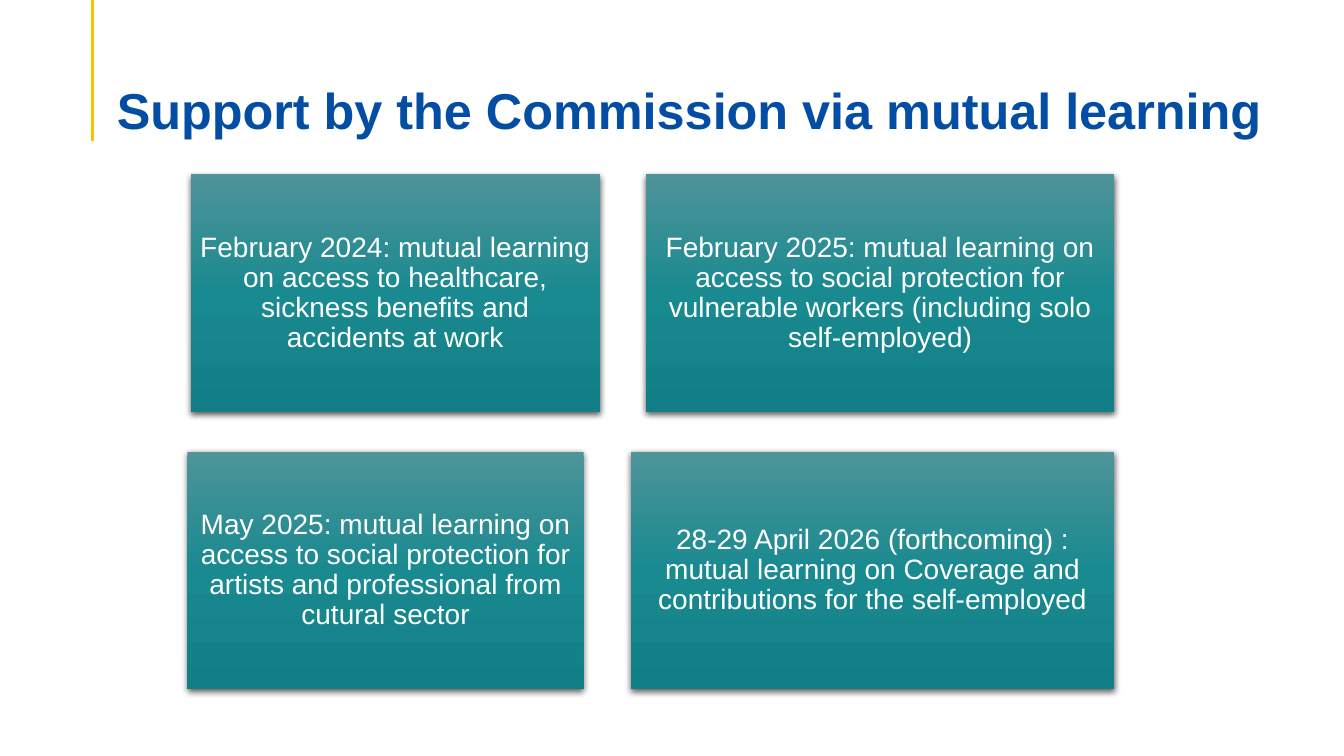
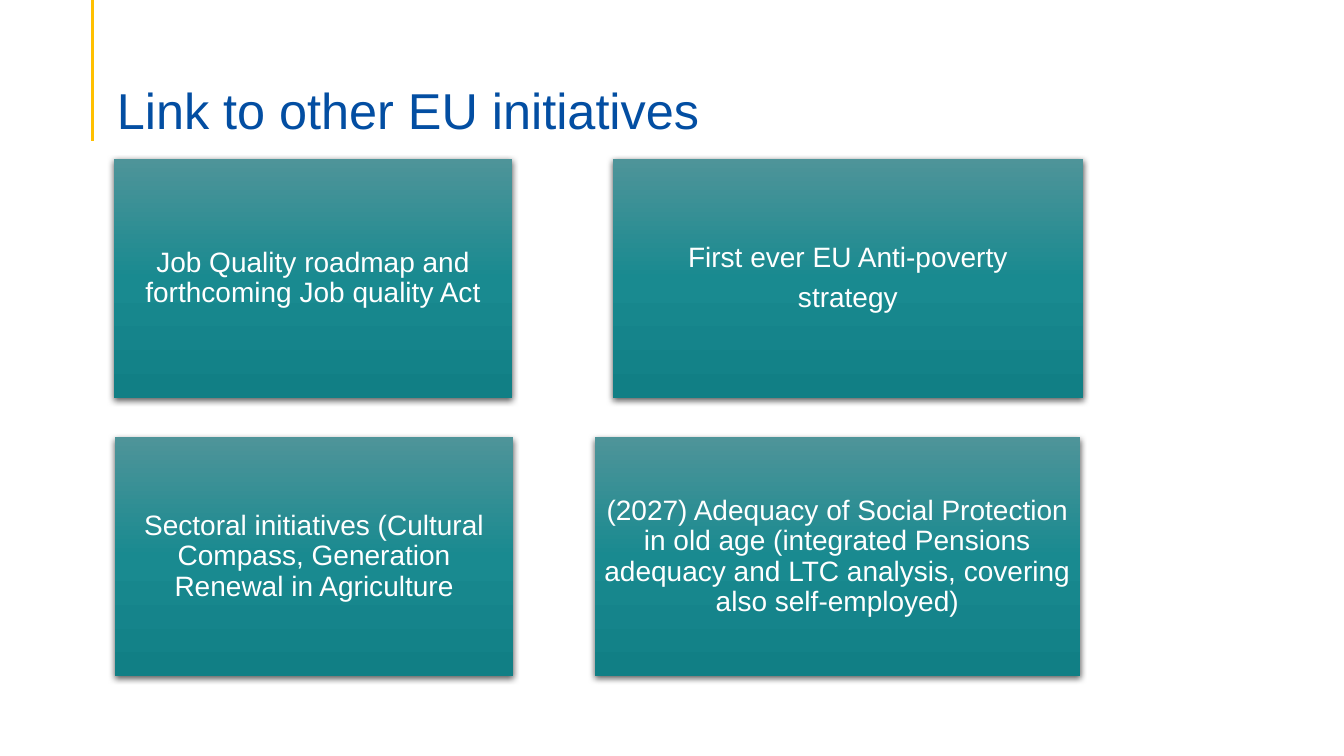
"""Build two slides of titled teal cards on mutual learning and EU initiatives."""
from copy import deepcopy
from dataclasses import dataclass

from lxml.etree import SubElement
from pptx import Presentation
from pptx.dml.color import RGBColor as Color
from pptx.enum.shapes import MSO_CONNECTOR as Connector, MSO_SHAPE as Shape
from pptx.enum.text import MSO_ANCHOR as Anchor, PP_ALIGN as Align
from pptx.oxml.ns import qn
from pptx.util import Inches, Pt


@dataclass(frozen=True)
class Theme:
    font: str = "Arial"
    title_color: str = "034EA2"
    accent_color: str = "FFC000"
    card_text_color: str = "FFFFFF"
    shadow_color: str = "000000"
    card_gradient: tuple = ((0, "4E9499"), (0.5, "198A90"), (1, "117F85"))
    title_size: int = 36
    card_size: int = 20
    line_spacing: float = 0.9
    card_space_after: int = 7


theme = Theme()


def write_text(shape, text, size, color, anchor, insets, align, bold=False, space_after=0):
    frame = shape.text_frame
    frame.word_wrap = True
    frame.vertical_anchor = anchor
    frame.margin_left, frame.margin_top, frame.margin_right, frame.margin_bottom = map(Inches, insets)
    frame.text = text
    for paragraph in frame.paragraphs:
        paragraph.alignment = align
        paragraph.line_spacing = theme.line_spacing
        paragraph.space_after = Pt(space_after)
        for run in paragraph.runs:
            run.font.name = theme.font
            run.font.size = Pt(size)
            run.font.bold = bold
            run.font.color.rgb = Color.from_string(color)


def style_card(card):
    card.line.fill.background()
    card.fill.gradient()
    card.fill.gradient_angle = 270
    properties = card.element.spPr
    first_stop = properties.find(".//" + qn("a:gs"))
    first_stop.addnext(deepcopy(first_stop))
    for stop, (position, color) in zip(card.fill.gradient_stops, theme.card_gradient):
        stop.position = position
        stop.color.rgb = Color.from_string(color)
    card.shadow.inherit = False
    shadow = SubElement(properties.find(qn("a:effectLst")), qn("a:outerShdw"),
                        blurRad=str(Pt(4.5)), dist=str(Pt(1.5)), dir="5400000",
                        algn="ctr", rotWithShape="0")
    shadow_color = SubElement(shadow, qn("a:srgbClr"), val=theme.shadow_color)
    SubElement(shadow_color, qn("a:alpha"), val="63000")


slides = [
    {
        "title": "Support by the Commission via mutual learning",
        "bold": True,
        "card_height": 2.36,
        "rows": [
            (1.73, [
                (1.89, 4.06, "February 2024: mutual learning on access to healthcare, "
                             "sickness benefits and accidents at work"),
                (6.41, 4.64, "February 2025: mutual learning on access to social protection "
                             "for vulnerable workers (including solo self-employed)"),
            ]),
            (4.48, [
                (1.86, 3.93, "May 2025: mutual learning on access to social protection "
                             "for artists and professional from cutural sector"),
                (6.26, 4.79, "28-29 April 2026 (forthcoming) : mutual learning on Coverage "
                             "and contributions for the self-employed"),
            ]),
        ],
    },
    {
        "title": "Link to other EU initiatives",
        "bold": False,
        "card_height": 2.37,
        "rows": [
            (1.58, [
                (1.13, 3.95, "Job Quality roadmap and forthcoming Job quality Act"),
                (6.08, 4.66, "First ever EU Anti-poverty\nstrategy"),
            ]),
            (4.34, [
                (1.14, 3.95, "Sectoral initiatives (Cultural Compass, Generation Renewal "
                             "in Agriculture"),
                (5.9, 4.81, "(2027) Adequacy of Social Protection in old age (integrated "
                            "Pensions adequacy and LTC analysis, covering also self-employed)"),
            ]),
        ],
    },
]

presentation = Presentation()
presentation.slide_width = Inches(13.33)
presentation.slide_height = Inches(7.5)
blank_layout = presentation.slide_layouts[6]

for content in slides:
    slide = presentation.slides.add_slide(blank_layout)

    accent = slide.shapes.add_connector(Connector.STRAIGHT, Inches(0.92), 0, Inches(0.92), Inches(1.4))
    accent.line.color.rgb = Color.from_string(theme.accent_color)
    accent.line.width = Pt(2.25)
    SubElement(accent.element.spPr, qn("a:effectLst"))

    title = slide.shapes.add_textbox(Inches(1.06), Inches(0.53), Inches(12.15), Inches(0.86))
    write_text(title, content["title"], theme.title_size, theme.title_color, Anchor.BOTTOM,
               (0.1, 0.05, 0.1, 0), Align.LEFT, bold=content["bold"])

    for top, cards in content["rows"]:
        for left, width, text in cards:
            card = slide.shapes.add_shape(Shape.RECTANGLE, Inches(left), Inches(top),
                                          Inches(width), Inches(content["card_height"]))
            style_card(card)
            write_text(card, text, theme.card_size, theme.card_text_color, Anchor.MIDDLE,
                       (0.08,) * 4, Align.CENTER, space_after=theme.card_space_after)

presentation.save("out.pptx")
